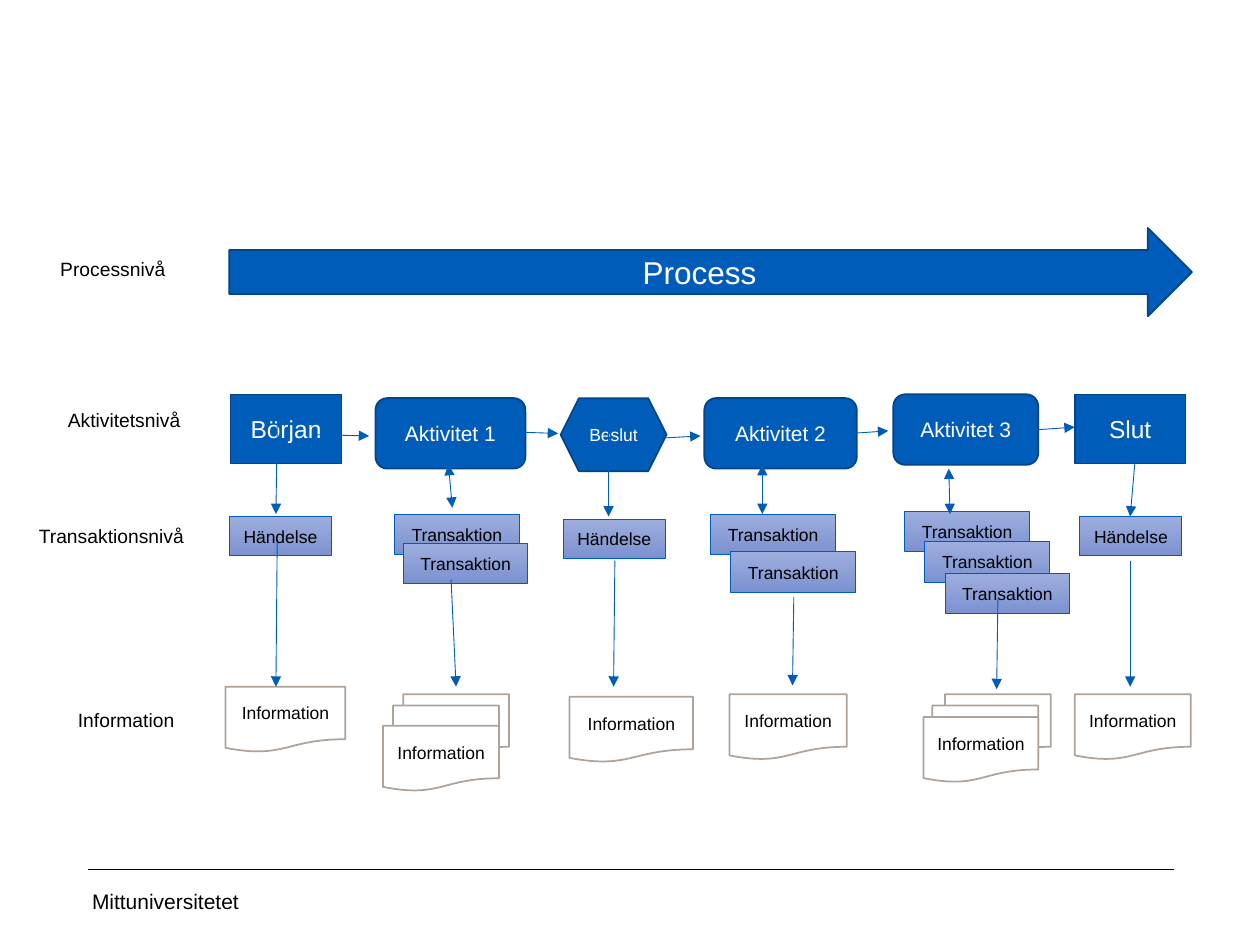
from pptx import Presentation
from pptx.dml.color import RGBColor
from pptx.enum.shapes import MSO_CONNECTOR as CONN, MSO_SHAPE as SHP
from pptx.enum.text import MSO_ANCHOR as ANC, PP_ALIGN as AL
from pptx.oxml.ns import qn
from pptx.util import Inches, Pt
from lxml import etree

BLUE, NAVY, TAUPE = "005CB9", "004489", "AEA299"
WHITE, BLACK = "FFFFFF", "000000"
GRADIENT = ("9DADDE", "7C92D0")

# Process and activity level: shape, text, size, left, top, width, height
STEPS = [
    (SHP.RIGHT_ARROW, "Process", 18, 1.82, 1.81, 7.64, 0.7),
    (SHP.RECTANGLE, "Början", 14, 1.83, 3.13, 0.88, 0.55),
    (SHP.RECTANGLE, "Slut", 14, 8.53, 3.13, 0.88, 0.55),
    (SHP.ROUNDED_RECTANGLE, "Aktivitet 1", 12, 2.98, 3.16, 1.19, 0.56),
    (SHP.ROUNDED_RECTANGLE, "Aktivitet 2", 12, 5.59, 3.16, 1.21, 0.56),
    (SHP.ROUNDED_RECTANGLE, "Aktivitet 3", 12, 7.09, 3.13, 1.15, 0.56),
    (SHP.HEXAGON, "Beslut", 10, 4.45, 3.16, 0.84, 0.58),
]
# Transaction level: text, (width, height), positions
BOXES = [
    ("Händelse", (0.81, 0.31), [(1.82, 4.1), (4.47, 4.12), (8.57, 4.1)]),
    ("Transaktion", (0.99, 0.32), [
        (3.13, 4.08), (3.2, 4.31), (5.64, 4.08), (5.8, 4.38),
        (7.18, 4.06), (7.34, 4.3), (7.5, 4.55)]),
]
# Information level: text, left, top, width; sheets further back are blank
DOC_H = 0.52
DOCS = [
    ("Information", 1.79, 5.45, 0.95),
    ("", 3.2, 5.51, 0.84), ("", 3.12, 5.6, 0.84),
    ("Information", 3.04, 5.76, 0.92),
    ("Information", 4.52, 5.53, 0.98),
    ("Information", 5.79, 5.51, 0.93),
    ("", 7.5, 5.51, 0.84), ("", 7.4, 5.6, 0.84),
    ("Information", 7.33, 5.69, 0.91),
    ("Information", 8.53, 5.51, 0.92),
]
# Arrows: x1, y1, x2, y2
FLOW = [
    (2.51, 3.45, 2.93, 3.46), (4.12, 3.43, 4.43, 3.44), (5.19, 3.48, 5.56, 3.46),
    (6.61, 3.45, 7.05, 3.42), (8.1, 3.42, 8.53, 3.39),
]
DOWN = [
    (2.2, 3.38, 2.19, 4.08), (4.83, 3.4, 4.83, 4.1), (9.01, 3.64, 8.97, 4.1),
    (2.2, 4.3, 2.19, 5.45), (3.58, 4.6, 3.62, 5.45), (4.88, 4.45, 4.87, 5.45),
    (6.3, 4.74, 6.29, 5.44), (7.92, 4.76, 7.91, 5.47), (8.97, 4.45, 8.97, 5.45),
]
BOTH_WAYS = [
    (3.56, 3.69, 3.59, 4.03), (6.05, 3.69, 6.05, 4.08), (7.53, 3.72, 7.54, 4.08),
]
# Level labels: text, left, top, width
LABELS = [
    ("Processnivå", 0.38, 1.99, 1.04),
    ("Aktivitetsnivå", 0.44, 3.19, 1.1),
    ("Transaktionsnivå", 0.21, 4.11, 1.37),
    ("Information", 0.52, 5.57, 0.97),
]


def rgb(color):
    return RGBColor.from_string(color)


def write(sp, text, size, color, align, anchor):
    tf = sp.text_frame
    tf.word_wrap = False
    tf.vertical_anchor = anchor
    p = tf.paragraphs[0]
    p.alignment = align
    r = p.add_run()
    r.text = text
    r.font.name, r.font.size = "Arial", Pt(size)
    r.font.color.rgb = rgb(color)


def add_box(s, kind, box, text, size, color, fill, line, weight):
    sp = s.shapes.add_shape(kind, *map(Inches, box))
    sp.shadow.inherit = False
    if isinstance(fill, tuple):
        sp.fill.gradient()
        sp.fill.gradient_angle = 270
        for stop, shade in zip(sp.fill.gradient_stops, fill):
            stop.color.rgb = rgb(shade)
    else:
        sp.fill.solid()
        sp.fill.fore_color.rgb = rgb(fill)
    sp.line.color.rgb = rgb(line)
    sp.line.width = Pt(weight)
    if text:
        write(sp, text, size, color, AL.CENTER, ANC.MIDDLE)


def add_line(s, ends, color, weight, heads=()):
    cn = s.shapes.add_connector(CONN.STRAIGHT, *map(Inches, ends))
    cn.line.color.rgb = rgb(color)
    cn.line.width = Pt(weight)
    for head in heads:
        etree.SubElement(cn.line._get_or_add_ln(), qn(head), type="triangle")
    etree.SubElement(cn._element.spPr, qn("a:effectLst"))


def add_label(s, text, box, size, anchor=ANC.TOP):
    sp = s.shapes.add_textbox(*map(Inches, box))
    write(sp, text, size, BLACK, AL.LEFT, anchor)
    return sp


def main():
    prs = Presentation()
    prs.slide_width, prs.slide_height = Inches(10), Inches(7.5)
    s = prs.slides.add_slide(prs.slide_layouts[6])

    # Footer
    footer = add_label(s, "Mittuniversitetet", (0.69, 6.95, 2.25, 0.4), 12, ANC.MIDDLE)
    footer.text_frame.margin_left = Inches(0.04)
    add_line(s, (0.7, 6.9, 9.32, 6.9), BLACK, 0.25)

    # Process steps and the arrows between them
    for kind, text, size, *box in STEPS:
        add_box(s, kind, box, text, size, WHITE, BLUE, NAVY, 1)
    for ends in FLOW:
        add_line(s, ends, BLUE, 0.5, ["a:tailEnd"])

    # Events and transactions
    for text, size, spots in BOXES:
        for spot in spots:
            add_box(s, SHP.RECTANGLE, spot + size, text, 10, BLACK, GRADIENT, BLUE, 0.5)

    # Documents
    for text, x, y, w in DOCS:
        add_box(s, SHP.FLOWCHART_DOCUMENT, (x, y, w, DOC_H), text, 10, BLACK,
                WHITE, TAUPE, 1)

    # Arrows between levels
    for ends in DOWN:
        add_line(s, ends, BLUE, 0.5, ["a:tailEnd"])
    for ends in BOTH_WAYS:
        add_line(s, ends, BLUE, 0.5, ["a:headEnd", "a:tailEnd"])

    # Level labels
    for text, x, y, w in LABELS:
        add_label(s, text, (x, y, w, 0.29), 11)

    prs.save("out.pptx")


if __name__ == "__main__":
    main()
